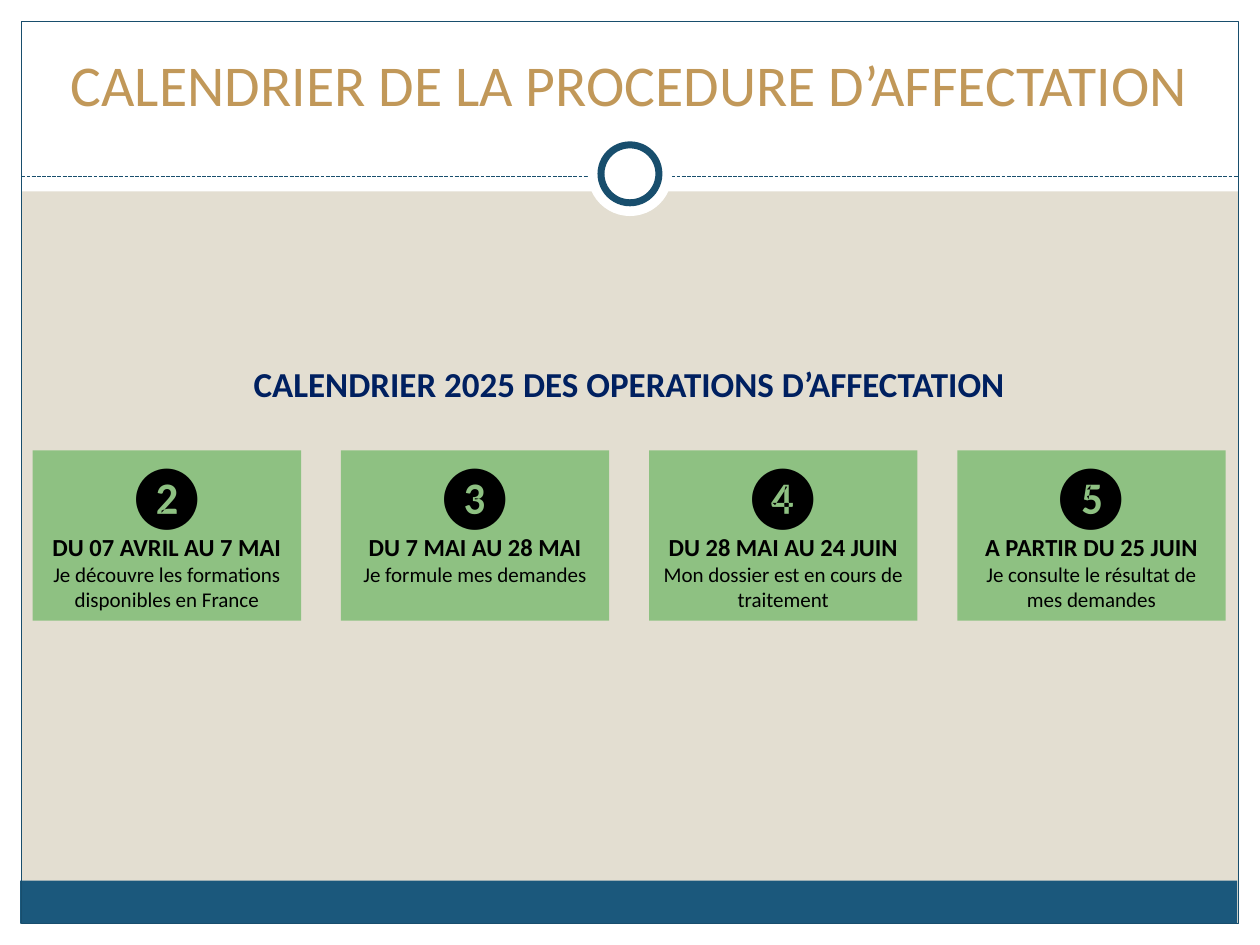
from lxml import etree
from pptx import Presentation
from pptx import util as u
from pptx.dml.color import RGBColor
from pptx.enum import dml, shapes, text

# The page is a grid of 100 columns by 75 rows, each a tenth of an inch
COLUMNS, ROWS = 100, 75
UNIT = u.Inches(0.1)
FRAME = 1.7
WHITE, NAVY, GREEN = "FFFFFF", "184E6D", "8EC182"

deck = Presentation()
deck.slide_width, deck.slide_height = COLUMNS * UNIT, ROWS * UNIT
page = deck.slides.add_slide(deck.slide_layouts[6])


def color(code):
    return RGBColor.from_string(code)


def add_text(frame, content, size, ink="000000", bold=False, first=True):
    para = frame.paragraphs[0] if first else frame.add_paragraph()
    para.alignment = text.PP_ALIGN.CENTER
    span = para.add_run()
    span.text = content
    span.font.name, span.font.size, span.font.bold = "Calibri", u.Pt(size), bold
    span.font.color.rgb = color(ink)


page.background.fill.solid()
page.background.fill.fore_color.rgb = color("E3DED1")

# White margins and header, footer band, then the outline
bands = [
    (0, ROWS - FRAME, COLUMNS, FRAME, WHITE),
    (0, 0, COLUMNS, 15.2, WHITE),
    (0, 0, FRAME, ROWS, WHITE),
    (COLUMNS - FRAME, 0, FRAME, ROWS, WHITE),
    (1.6, 69.9, 96.6, 3.4, "1B587C"),
    (FRAME, FRAME, COLUMNS - 2 * FRAME, ROWS - 2 * FRAME, None),
]
for left, top, width, height, fill in bands:
    band = page.shapes.add_shape(
        shapes.MSO_SHAPE.RECTANGLE, *(int(n * UNIT) for n in (left, top, width, height)))
    band.shadow.inherit = False
    if fill:
        band.fill.solid()
        band.fill.fore_color.rgb = color(fill)
        band.line.fill.background()
    else:
        band.fill.background()
        band.line.color.rgb = color(NAVY)
        band.line.width = u.Pt(0.75)

# Dashed rule under the title
rule = page.shapes.add_connector(
    shapes.MSO_CONNECTOR.STRAIGHT,
    *(int(n * UNIT) for n in (FRAME, 14, COLUMNS - FRAME, 14)))
rule.line.color.rgb = color(NAVY)
rule.line.width = u.Pt(0.75)
rule.line.dash_style = dml.MSO_LINE.SQUARE_DOT
properties = rule.line._get_or_add_ln().getparent()
etree.SubElement(properties, "{http://schemas.openxmlformats.org/drawingml/2006/main}effectLst")

# Ring centred on the page, over a white disc
for diameter, outline in ((6.7, None), (4.6, NAVY)):
    disc = page.shapes.add_shape(
        shapes.MSO_SHAPE.OVAL,
        *(int(n * UNIT) for n in (COLUMNS / 2 - diameter / 2, 13.8 - diameter / 2,
                                  diameter, diameter)))
    disc.shadow.inherit = False
    disc.fill.solid()
    disc.fill.fore_color.rgb = color(WHITE)
    if outline:
        disc.line.color.rgb = color(outline)
        disc.line.width = u.Pt(4)
    else:
        disc.line.fill.background()

# Title and calendar heading
headings = [
    (3.3, 2.5, 93.3, 7.4, "CALENDRIER DE LA PROCEDURE D’AFFECTATION",
     33, "C19859", False, text.MSO_ANCHOR.BOTTOM),
    (1.9, 28.3, 96.1, 4.4, "CALENDRIER 2025 DES OPERATIONS D’AFFECTATION",
     20, "002060", True, text.MSO_ANCHOR.TOP),
]
for left, top, width, height, content, size, ink, bold, anchor in headings:
    box = page.shapes.add_textbox(*(int(n * UNIT) for n in (left, top, width, height)))
    box.text_frame.word_wrap = True
    box.text_frame.vertical_anchor = anchor
    add_text(box.text_frame, content, size, ink=ink, bold=bold)

# Step cards, evenly spaced
steps = [
    ("❷", "DU 07 AVRIL AU 7 MAI", "Je découvre les formations disponibles en France"),
    ("❸", "DU 7 MAI AU 28 MAI", "Je formule mes demandes"),
    ("❹", "DU 28 MAI AU 24 JUIN", "Mon dossier est en cours de traitement"),
    ("❺", "A PARTIR DU 25 JUIN", "Je consulte le résultat de mes demandes"),
]
for index, (number, dates, action) in enumerate(steps):
    card = page.shapes.add_shape(
        shapes.MSO_SHAPE.RECTANGLE,
        *(int(n * UNIT) for n in (2.6 + index * 24.46, 35.75, 21.3, 13.5)))
    card.shadow.inherit = False
    card.fill.solid()
    card.fill.fore_color.rgb = color(GREEN)
    card.line.fill.background()
    frame = card.text_frame
    frame.word_wrap = True
    frame.auto_size = text.MSO_AUTO_SIZE.SHAPE_TO_FIT_TEXT
    frame.vertical_anchor = text.MSO_ANCHOR.TOP
    add_text(frame, number, 36)
    add_text(frame, dates, 14, bold=True, first=False)
    add_text(frame, action, 12, first=False)

deck.save("out.pptx")
